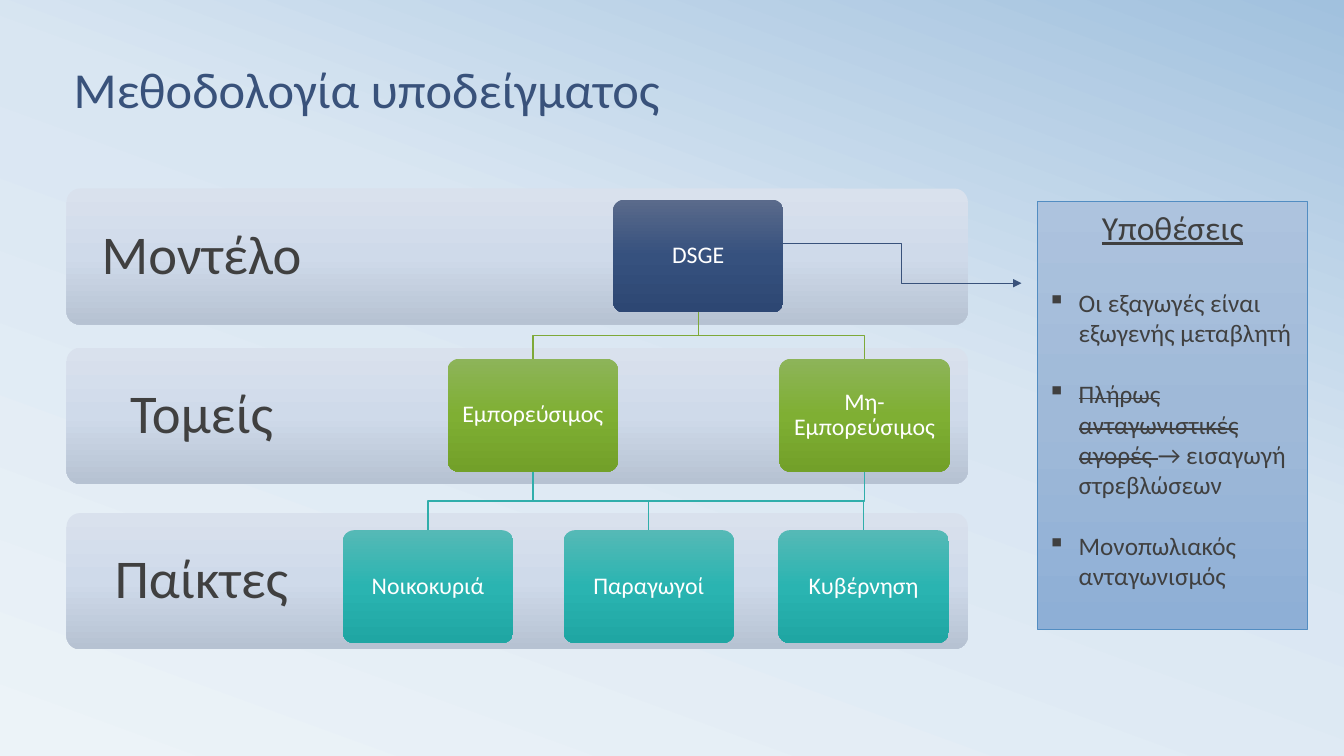
from lxml import etree
from pptx import Presentation
from pptx import util as u
from pptx.dml.color import RGBColor
from pptx.enum import shapes, text
from pptx.oxml.ns import qn

COLORS = {
    "title": "39527B", "text": "404040", "box_text": "FFFFFF",
    "green_line": "7EA939", "teal_line": "30AEAB", "panel_line": "528DC2",
}
GRADIENTS = {
    "background": [(0, "ECF3F8"), (58, "D9E6F2"), (100, "A1C1DE")],
    "band": [(0, "D9E1ED"), (50, "CFDAEA"), (100, "B6C2D2")],
    "navy": [(0, "5A6A8B"), (50, "36517E"), (100, "2D4773")],
    "green": [(0, "8DB459"), (50, "7FAF33"), (100, "72A029")],
    "teal": [(0, "55B9B6"), (50, "2AB4B1"), (100, "1FA6A3")],
    "panel": [(0, "ADC3DE"), (50, "9FB9D8"), (100, "8EAFD6")],
}
BANDS = [("Μοντέλο", 1.87), ("Τομείς", 3.45), ("Παίκτες", 5.09)]
BOXES = [
    ("DSGE", 6.08, 1.98, "navy"),
    ("Εμπορεύσιμος", 4.44, 3.56, "green"),
    ("Μη-Εμπορεύσιμος", 7.73, 3.56, "green"),
    ("Νοικοκυριά", 3.4, 5.26, "teal"),
    ("Παραγωγοί", 5.59, 5.26, "teal"),
    ("Κυβέρνηση", 7.72, 5.26, "teal"),
]
LINKS = [
    ("DSGE", "Εμπορεύσιμος", "green_line"),
    ("DSGE", "Μη-Εμπορεύσιμος", "green_line"),
    ("Εμπορεύσιμος", "Νοικοκυριά", "teal_line"),
    ("Εμπορεύσιμος", "Κυβέρνηση", "teal_line"),
    ("Μη-Εμπορεύσιμος", "Παραγωγοί", "teal_line"),
]
ASSUMPTIONS = [
    [("Οι εξαγωγές είναι εξωγενής μεταβλητή", False)],
    [("Πλήρως ανταγωνιστικές αγορές ", True), ("→ εισαγωγή στρεβλώσεων", False)],
    [("Μονοπωλιακός ανταγωνισμός", False)],
]


class Deck:
    """Style and current slide, with one method for each kind of element."""

    font = "Calibri"

    def __init__(self, prs):
        self.slide = prs.slides.add_slide(prs.slide_layouts[5])
        self.shapes = self.slide.shapes

    def gradient(self, fill, element, name, angle=90):
        fill.gradient()
        grad = element.find(".//" + qn("a:gradFill"))
        stops = grad.find(qn("a:gsLst"))
        for stop in list(stops):
            stops.remove(stop)
        for pos, color in GRADIENTS[name]:
            stop = etree.SubElement(stops, qn("a:gs"), pos=str(pos * 1000))
            etree.SubElement(stop, qn("a:srgbClr"), val=color)
        fill.gradient_angle = 360 - angle

    def background(self):
        self.gradient(self.slide.background.fill, self.slide._element, "background", 290)

    def style(self, p, size, color, align):
        p.alignment = align
        p.font.name = self.font
        p.font.size = u.Pt(size)
        p.font.color.rgb = RGBColor.from_string(COLORS[color])

    def line(self, sp, color, width):
        sp.line.color.rgb = RGBColor.from_string(COLORS[color])
        sp.line.width = u.Pt(width)

    def title(self, label, *box):
        sp = self.shapes.title
        sp.left, sp.top, sp.width, sp.height = map(u.Inches, box)
        tf = sp.text_frame
        tf.text = label
        tf.vertical_anchor = text.MSO_ANCHOR.BOTTOM
        self.style(tf.paragraphs[0], 36, "title", text.PP_ALIGN.LEFT)
        tf.paragraphs[0].line_spacing = 0.8

    def shape(self, kind, box, gradient):
        sp = self.shapes.add_shape(kind, *map(u.Inches, box))
        sp.shadow.inherit = False
        self.gradient(sp.fill, sp._element, gradient)
        sp.line.fill.background()
        sp.text_frame.word_wrap = True
        return sp

    def rounded(self, label, box, gradient, size, color, inset, right):
        sp = self.shape(shapes.MSO_SHAPE.ROUNDED_RECTANGLE, box, gradient)
        sp.adjustments[0] = 0.1
        tf = sp.text_frame
        tf.text = label
        tf.vertical_anchor = text.MSO_ANCHOR.MIDDLE
        tf.margin_left = tf.margin_top = tf.margin_bottom = u.Inches(inset)
        tf.margin_right = u.Inches(right)
        self.style(tf.paragraphs[0], size, color, text.PP_ALIGN.CENTER)
        tf.paragraphs[0].line_spacing = 0.9
        return sp

    def band(self, label, top):
        self.rounded(label, (0.66, top, 8.94, 1.35), "band", 39, "text", 0.3, 6.56)

    def box(self, label, left, top, gradient):
        return self.rounded(label, (left, top, 1.69, 1.12), gradient, 17, "box_text", 0.1, 0.1)

    def link(self, parent, child, color):
        x1, y1 = parent.left + parent.width // 2, parent.top + parent.height
        x2, y2 = child.left + child.width // 2, child.top
        mid = (y1 + y2) // 2
        path = self.shapes.build_freeform(x1, y1)
        path.add_line_segments([(x1, mid), (x2, mid), (x2, y2)], close=False)
        sp = path.convert_to_shape()
        sp.shadow.inherit = False
        sp.fill.background()
        self.line(sp, color, 1)

    def arrow(self, *ends):
        sp = self.shapes.add_connector(shapes.MSO_CONNECTOR.ELBOW, *map(u.Inches, ends))
        self.line(sp, "title", 0.5)
        etree.SubElement(sp.line._get_or_add_ln(), qn("a:tailEnd"), type="triangle")
        etree.SubElement(sp._element.spPr, qn("a:effectLst"))

    def bullet(self, p):
        pPr = p._p.get_or_add_pPr()
        pPr.set("marL", str(u.Inches(0.31)))
        pPr.set("indent", str(u.Inches(-0.31)))
        pPr.insert_element_before(
            pPr.makeelement(qn("a:buChar"), {"char": "▪"}), "a:defRPr")

    def panel(self, heading, items, *box):
        sp = self.shape(shapes.MSO_SHAPE.RECTANGLE, box, "panel")
        self.line(sp, "panel_line", 0.5)
        tf = sp.text_frame
        tf.vertical_anchor = text.MSO_ANCHOR.TOP
        p = tf.paragraphs[0]
        p.text = heading
        self.style(p, 24, "text", text.PP_ALIGN.CENTER)
        p.font.underline = True
        p.space_after = u.Pt(29)
        for item in items:
            p = tf.add_paragraph()
            self.style(p, 18, "text", text.PP_ALIGN.LEFT)
            self.bullet(p)
            p.space_after = u.Pt(22)
            for words, struck in item:
                r = p.add_run()
                r.text = words
                if struck:
                    r._r.get_or_add_rPr().set("strike", "sngStrike")


def main():
    prs = Presentation()
    prs.slide_width, prs.slide_height = u.Inches(13.33), u.Inches(7.5)
    deck = Deck(prs)
    deck.background()
    deck.title("Μεθοδολογία υποδείγματος", 0.63, 0.27, 7.1, 0.95)
    for label, top in BANDS:
        deck.band(label, top)
    boxes = {box[0]: deck.box(*box) for box in BOXES}
    for parent, child, color in LINKS:
        deck.link(boxes[parent], boxes[child], color)
    deck.arrow(7.74, 2.41, 10.13, 2.81)
    deck.panel("Υποθέσεις", ASSUMPTIONS, 10.29, 2, 2.68, 4.24)
    prs.save("out.pptx")


if __name__ == "__main__":
    main()
